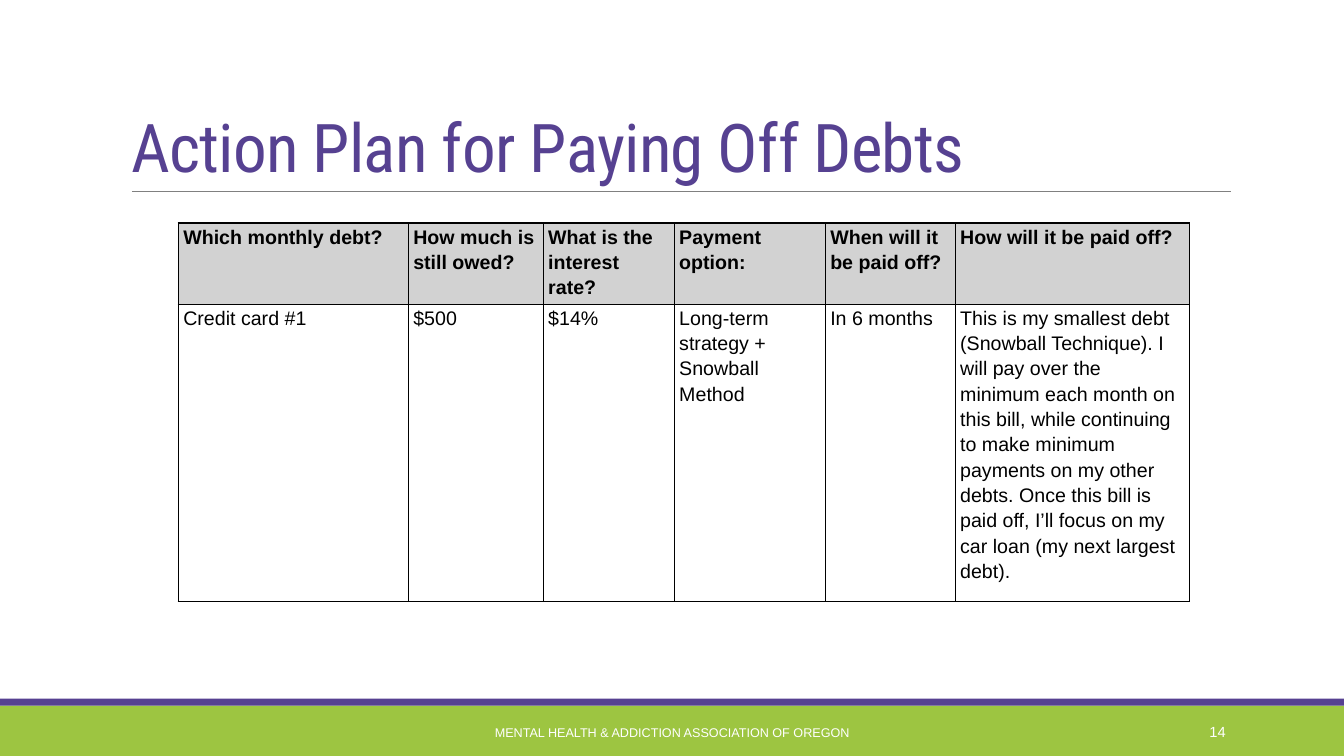
from pptx import Presentation
from pptx.dml.color import RGBColor
from pptx.enum.shapes import MSO_CONNECTOR, MSO_SHAPE
from pptx.enum.text import MSO_ANCHOR, MSO_AUTO_SIZE, PP_ALIGN
from pptx.oxml.ns import qn
from pptx.util import Pt
from lxml import etree

PURPLE = RGBColor(0x56, 0x41, 0x91)
GREEN = RGBColor(0x9D, 0xC5, 0x41)
GREY = RGBColor(0x80, 0x80, 0x80)
HEADER_GREY = RGBColor(0xD2, 0xD2, 0xD2)
WHITE = RGBColor(0xFF, 0xFF, 0xFF)
BLACK = RGBColor(0x00, 0x00, 0x00)
LEFT, CENTER, RIGHT = PP_ALIGN.LEFT, PP_ALIGN.CENTER, PP_ALIGN.RIGHT
TOP, MIDDLE, BOTTOM = MSO_ANCHOR.TOP, MSO_ANCHOR.MIDDLE, MSO_ANCHOR.BOTTOM
NO_AUTOSIZE = MSO_AUTO_SIZE.NONE
STRAIGHT = MSO_CONNECTOR.STRAIGHT
RECTANGLE = MSO_SHAPE.RECTANGLE

TITLE_FONT = "Roboto Condensed"
BODY_FONT = "Arial"
TITLE_ONLY = 5

COLUMN_WIDTHS = [164.3, 96.4, 93.6, 107.9, 92.8, 167.2]
ROW_HEIGHTS = [54, 198]
DEBT_ROWS = [
    ["Which monthly debt?", "How much is still owed?", "What is the interest rate?",
     "Payment option:", "When will it be paid off?", "How will it be paid off?"],
    ["Credit card #1", "$500", "$14%", "Long-term strategy + Snowball Method", "In 6 months",
     "This is my smallest debt (Snowball Technique). I will pay over the minimum each month "
     "on this bill, while continuing to make minimum payments on my other debts. Once this "
     "bill is paid off, I’ll focus on my car loan (my next largest debt)."],
]


class SlideBuilder:
    def __init__(self, deck):
        self.page = deck.slides.add_slide(deck.slide_layouts[TITLE_ONLY])
        self.shapes = self.page.shapes

    def add_text(self, frame, text, size, color, font=BODY_FONT, bold=False,
                 align=LEFT, spacing=1.0):
        para = frame.paragraphs[0]
        para.alignment = align
        para.line_spacing = spacing
        span = para.add_run()
        span.text = text
        span.font.name = font
        span.font.size = Pt(size)
        span.font.bold = bold
        span.font.color.rgb = color
        return span

    def title(self, text, left, top, width, height):
        box = self.shapes.title
        box.left, box.top, box.width, box.height = Pt(left), Pt(top), Pt(width), Pt(height)
        frame = box.text_frame
        frame.auto_size = NO_AUTOSIZE
        frame.word_wrap = True
        frame.vertical_anchor = BOTTOM
        span = self.add_text(frame, text, 48, PURPLE, TITLE_FONT, spacing=0.85)
        span.font._element.set("spc", "-50")

    def band(self, color, left, top, width, height):
        box = self.shapes.add_shape(RECTANGLE, Pt(left), Pt(top), Pt(width), Pt(height))
        box.shadow.inherit = False
        box.fill.solid()
        box.fill.fore_color.rgb = color
        box.line.fill.background()

    def rule(self, left, right, y):
        line = self.shapes.add_connector(STRAIGHT, Pt(left), Pt(y), Pt(right), Pt(y))
        line.line.color.rgb = GREY
        line.line.width = Pt(0.5)
        etree.SubElement(line._element.spPr, qn("a:effectLst"))

    def label(self, text, size, align, left, top, width, height):
        box = self.shapes.add_textbox(Pt(left), Pt(top), Pt(width), Pt(height))
        frame = box.text_frame
        frame.word_wrap = True
        frame.vertical_anchor = MIDDLE
        self.add_text(frame, text, size, WHITE, align=align)

    def border(self, cell):
        properties = cell._tc.get_or_add_tcPr()
        for index, side in enumerate(("a:lnL", "a:lnR", "a:lnT", "a:lnB")):
            line = etree.Element(qn(side), w=str(Pt(1)))
            fill = etree.SubElement(line, qn("a:solidFill"))
            etree.SubElement(fill, qn("a:srgbClr"), val=str(BLACK))
            properties.insert(index, line)

    def table(self, rows, left, top, widths, heights):
        table = self.shapes.add_table(len(rows), len(widths), Pt(left), Pt(top),
                                      Pt(sum(widths)), Pt(sum(heights))).table
        table.horz_banding = False
        for column, width in zip(table.columns, widths):
            column.width = Pt(width)
        for row_index, (row, texts) in enumerate(zip(table.rows, rows)):
            row.height = Pt(heights[row_index])
            is_header = row_index == 0
            for cell, text in zip(row.cells, texts):
                cell.margin_left = cell.margin_right = Pt(3.6)
                cell.margin_top = cell.margin_bottom = Pt(0)
                cell.vertical_anchor = TOP
                if is_header:
                    cell.fill.solid()
                    cell.fill.fore_color.rgb = HEADER_GREY
                else:
                    cell.fill.background()
                self.border(cell)
                self.add_text(cell.text_frame, text, 14, BLACK, bold=is_header, spacing=1.15)


def main():
    deck = Presentation()
    deck.slide_width, deck.slide_height = Pt(960), Pt(540)
    slide = SlideBuilder(deck)
    slide.band(GREEN, 0, 504, 960, 36)
    slide.band(PURPLE, 0, 499, 960, 5)
    slide.rule(94.3, 879, 136.8)
    slide.title("Action Plan for Paying Off Debts", 86.4, 22.5, 792, 114.2)
    slide.label("MENTAL HEALTH & ADDICTION ASSOCIATION OF OREGON", 9, CENTER,
                290.3, 508.5, 379.5, 28.8)
    slide.label("14", 10.5, RIGHT, 779.6, 508.5, 103, 28.8)
    slide.table(DEBT_ROWS, 127.3, 159.3, COLUMN_WIDTHS, ROW_HEIGHTS)
    deck.save("out.pptx")


if __name__ == "__main__":
    main()
